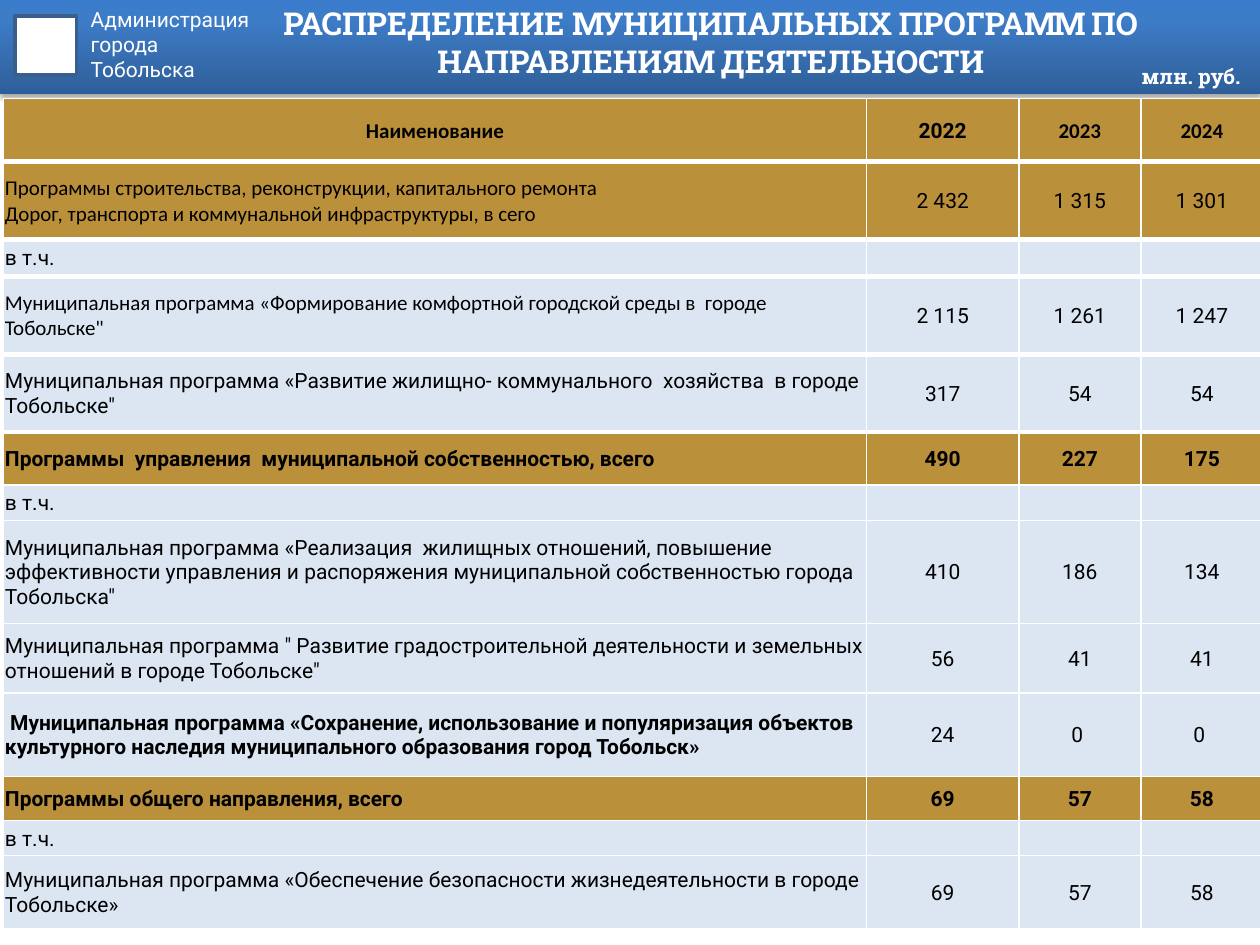
"""Builds the slide with the distribution of Tobolsk municipal programmes."""
from lxml import etree
from pptx import Presentation
from pptx import util as u
from pptx.dml.color import RGBColor
from pptx.enum import shapes, text
from pptx.oxml import parse_xml
from pptx.oxml.ns import nsdecls, qn

COLORS = {
    "white": "FFFFFF", "black": "000000", "gold": "BB903B", "pale": "DCE6F2",
    "bar_low": "2F5F99", "bar_mid": "3D7CC7", "bar_top": "3A7CCB", "frame": "3A5F8C",
}
COLUMNS = (17.4, 3.07, 2.46, 2.46)
SUBHEAD = "в т.ч."
BLANK = ("", "", "")
ROBOTO, CALIBRI, SLAB = "Roboto", "Calibri", "Roboto Slab"
THICK_RULES = range(1, 6)

ROWS = (
    (1.27, "gold", "Наименование", ("2022", "2023", "2024")),
    (1.57, "gold", "Программы строительства, реконструкции, капитального ремонта\n"
     "Дорог, транспорта и коммунальной инфраструктуры, в сего", ("2 432", "1 315", "1 301")),
    (0.74, "pale", SUBHEAD, BLANK),
    (1.57, "pale", "Муниципальная программа «Формирование комфортной городской среды в  городе Тобольске\"",
     ("2 115", "1 261", "1 247")),
    (1.57, "pale", "Муниципальная программа «Развитие жилищно- коммунального  хозяйства  в городе Тобольске\"",
     ("317", "54", "54")),
    (1.07, "gold", "Программы  управления  муниципальной собственностью, всего", ("490", "227", "175")),
    (0.71, "pale", SUBHEAD, BLANK),
    (2.08, "pale", "Муниципальная программа «Реализация  жилищных отношений, повышение эффективности "
     "управления и распоряжения муниципальной собственностью города Тобольска\"", ("410", "186", "134")),
    (1.4, "pale", "Муниципальная программа \" Развитие градостроительной деятельности и земельных "
     "отношений в городе Тобольске\"", ("56", "41", "41")),
    (1.68, "pale", " Муниципальная программа «Сохранение, использование и популяризация объектов "
     "культурного наследия муниципального образования город Тобольск»", ("24", "0 ", "0 ")),
    (0.89, "gold", "Программы общего направления, всего", ("69", "57", "58")),
    (0.71, "pale", SUBHEAD, BLANK),
    (1.47, "pale", "Муниципальная программа «Обеспечение безопасности жизнедеятельности в городе Тобольске»",
     ("69", "57", "58")),
)
BOLD_LABELS, BOLD_VALUES = (0, 5, 9, 10), (0, 5, 10)
CALIBRI_CELLS = ((0, 0), (0, 2), (0, 3), (1, 0), (3, 0))


def rgb(name):
    return RGBColor.from_string(COLORS[name])


def write(frame, content, font=ROBOTO, size=12, color="black", bold=False, align="LEFT"):
    """Fills a text frame, one paragraph per line."""
    for number, line in enumerate(content.split("\n")):
        paragraph = frame.add_paragraph() if number else frame.paragraphs[0]
        paragraph.alignment = getattr(text.PP_ALIGN, align)
        if not line:
            paragraph._p.get_or_add_endParaRPr().set("sz", str(size * 100))
            continue
        run = paragraph.add_run()
        run.text = line
        run.font.name, run.font.size, run.font.bold = font, u.Pt(size), bold
        run.font.color.rgb = rgb(color)


class Deck:
    """Holds the presentation style and the current slide."""

    def __init__(self):
        self.presentation = Presentation()
        self.presentation.slide_width = u.Cm(25.4)
        self.presentation.slide_height = u.Cm(19.05)
        self.slide = self.presentation.slides.add_slide(self.presentation.slide_layouts[5])

    def box(self, *place):
        return [u.Cm(length) for length in place]

    def rectangle(self, *place):
        shape = self.slide.shapes.add_shape(shapes.MSO_SHAPE.RECTANGLE, *self.box(*place))
        shape.shadow.inherit = False
        return shape

    def header_bar(self, *place):
        bar = self.rectangle(*place)
        bar.line.fill.background()
        stops = "".join(
            f'<a:gs pos="{position}"><a:srgbClr val="{COLORS[name]}"/></a:gs>'
            for position, name in ((0, "bar_low"), (80000, "bar_mid"), (100000, "bar_top")))
        properties = bar._element.spPr
        properties.find(qn("a:prstGeom")).addnext(parse_xml(
            f'<a:gradFill {nsdecls("a")} rotWithShape="1"><a:gsLst>{stops}</a:gsLst>'
            '<a:lin ang="16200000" scaled="0"/></a:gradFill>'))
        properties.find(qn("a:effectLst")).append(parse_xml(
            f'<a:outerShdw {nsdecls("a")} blurRad="39370" dist="22860" dir="5400000" rotWithShape="0">'
            f'<a:srgbClr val="{COLORS["black"]}"><a:alpha val="35000"/></a:srgbClr></a:outerShdw>'))

    def emblem(self, *place):
        square = self.rectangle(*place)
        square.fill.solid()
        square.fill.fore_color.rgb = rgb("white")
        square.line.color.rgb = rgb("frame")
        square.line.width = u.Pt(2)

    def title(self, content, *place):
        heading = self.slide.shapes.title
        self.slide.shapes._spTree.append(heading._element)
        heading.left, heading.top, heading.width, heading.height = self.box(*place)
        frame = heading.text_frame
        frame.word_wrap = True
        frame.auto_size = text.MSO_AUTO_SIZE.NONE
        frame.vertical_anchor = text.MSO_ANCHOR.MIDDLE
        frame.margin_bottom = u.Cm(0.25)
        write(frame, content, font=SLAB, size=18, color="white", bold=True, align="CENTER")

    def label(self, content, *place, **style):
        frame = self.slide.shapes.add_textbox(*self.box(*place)).text_frame
        frame.word_wrap = True
        frame.auto_size = text.MSO_AUTO_SIZE.SHAPE_TO_FIT_TEXT
        frame.margin_right = 0
        write(frame, content, color="white", **style)

    def cell(self, cell, content, fill, borders, **style):
        cell.margin_left = cell.margin_right = cell.margin_top = u.Cm(0.03)
        cell.margin_bottom = 0
        cell.vertical_anchor = text.MSO_ANCHOR.MIDDLE
        write(cell.text_frame, content, **style)
        properties = cell._tc.get_or_add_tcPr()
        for side, points in borders.items():
            edge = etree.SubElement(properties, qn(f"a:ln{side}"), w=str(u.Pt(points)))
            paint = etree.SubElement(edge, qn("a:solidFill"))
            etree.SubElement(paint, qn("a:srgbClr"), val=COLORS["white"])
        cell.fill.solid()
        cell.fill.fore_color.rgb = rgb(fill)

    def programmes(self, *place):
        table = self.slide.shapes.add_table(len(ROWS), len(COLUMNS), *self.box(*place)).table
        for column, width in zip(table.columns, COLUMNS):
            column.width = u.Cm(width)
        for r, (height, fill, name, amounts) in enumerate(ROWS):
            table.rows[r].height = u.Cm(height)
            top, bottom = (3 if rule in THICK_RULES else 1 for rule in (r, r + 1))
            for c, content in enumerate((name, *amounts)):
                self.cell(table.cell(r, c), content, fill, {"L": 1, "R": 1, "T": top, "B": bottom},
                          font=CALIBRI if (r, c) in CALIBRI_CELLS else ROBOTO,
                          bold=r in (BOLD_VALUES if c else BOLD_LABELS),
                          align="CENTER" if c or r == 0 else "LEFT")


def main():
    deck = Deck()
    deck.header_bar(0, 0, 25.4, 1.9)
    deck.emblem(0.3, 0.32, 1.24, 1.19)
    deck.label("Администрация\nгорода\nТобольска", 1.58, 0, 5.94, 2.31)
    deck.title("РАСПРЕДЕЛЕНИЕ МУНИЦИПАЛЬНЫХ ПРОГРАММ ПО НАПРАВЛЕНИЯМ ДЕЯТЕЛЬНОСТИ", 5.16, 0, 18.34, 1.8)
    deck.programmes(0.07, 1.99, 25.4, 16.71)
    deck.label("млн. руб.", 22.76, 1.15, 2.6, 0.76, font=SLAB, bold=True)
    deck.presentation.save("out.pptx")


if __name__ == "__main__":
    main()
